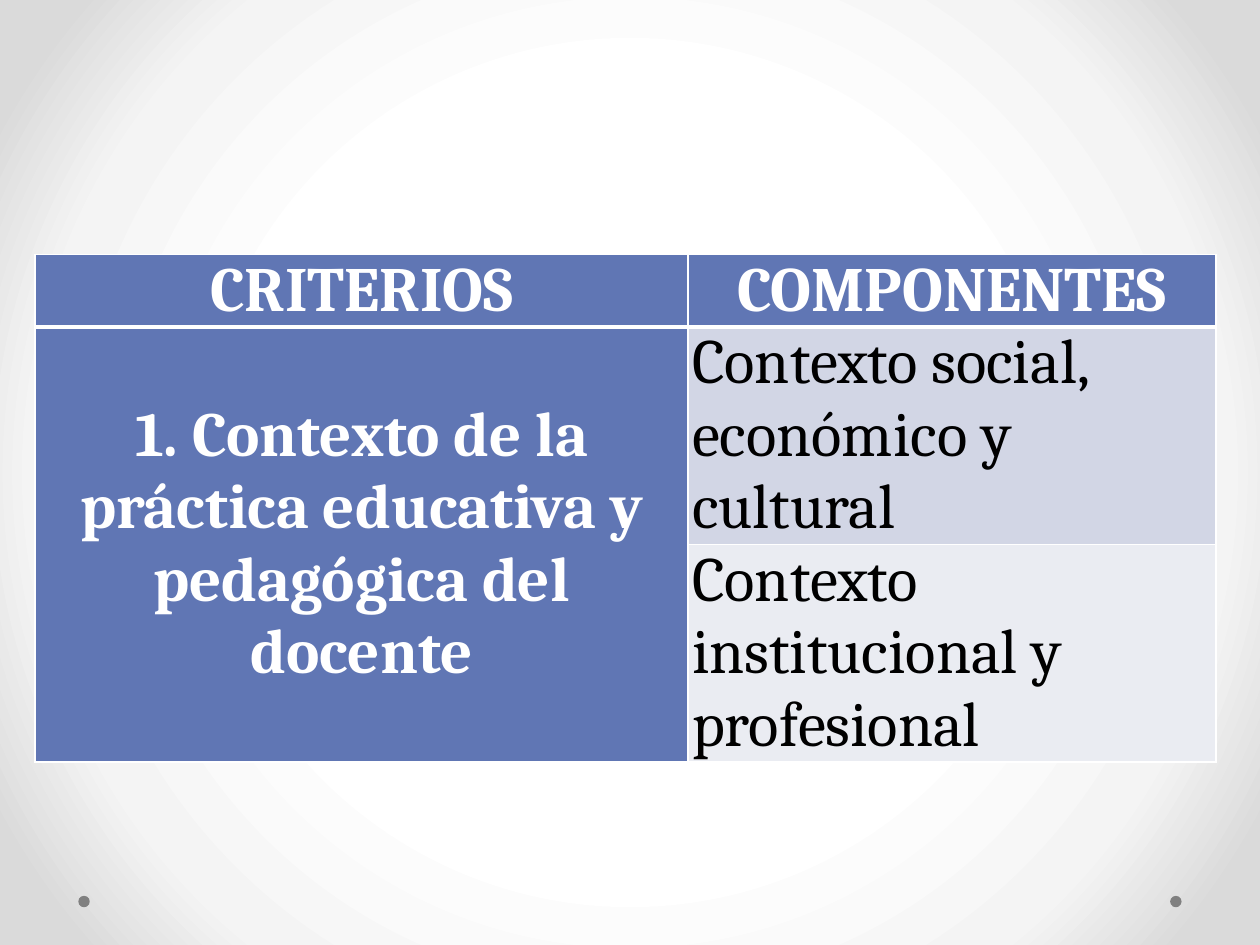
from dataclasses import dataclass

from pptx import Presentation
from pptx.dml.color import RGBColor
from pptx.enum.shapes import MSO_SHAPE as Shape
from pptx.enum.text import MSO_ANCHOR as Anchor, PP_ALIGN as Align
from pptx.oxml import parse_xml
from pptx.oxml.ns import nsdecls, qn
from pptx.util import Cm, Pt


@dataclass(frozen=True)
class Theme:
    font: str = "Cambria"
    size: int = 36
    accent: str = "6076B4"
    band_dark: str = "D2D6E5"
    band_light: str = "EAECF2"
    white: str = "FFFFFF"
    black: str = "000000"
    dot: str = "808080"
    backdrop: tuple = ((50, "FFFFFF"), (76, "F4F4F4"), (92, "DADADA"))


@dataclass(frozen=True)
class Box:
    left: float
    top: float
    width: float
    height: float


THEME = Theme()
PAGE = Box(0, 0, 25.4, 19.05)
TABLE = Box(0.71, 5.13, 23.8, 10.22)


def paint_backdrop(page):
    page.background.fill.solid()
    properties = page._element.find(".//" + qn("p:bgPr"))
    stops = "".join(
        f'<a:gs pos="{place * 1000}"><a:srgbClr val="{color}"/></a:gs>'
        for place, color in THEME.backdrop
    )
    gradient = parse_xml(
        f'<a:gradFill {nsdecls("a")} rotWithShape="1"><a:gsLst>{stops}</a:gsLst>'
        '<a:path path="circle"><a:fillToRect l="50000" t="50000" r="50000" b="50000"/>'
        "</a:path></a:gradFill>"
    )
    properties.replace(properties.find(qn("a:solidFill")), gradient)


def add_corner_dots(page, box):
    size, inset, rise = 0.23, 1.58, 0.99
    for left in (box.left + inset, box.left + box.width - inset - size):
        dot = page.shapes.add_shape(
            Shape.OVAL, Cm(left), Cm(box.top + box.height - rise), Cm(size), Cm(size)
        )
        dot.shadow.inherit = False
        dot.fill.solid()
        dot.fill.fore_color.rgb = RGBColor.from_string(THEME.dot)
        dot.line.fill.background()


def set_borders(cell, bottom):
    properties = cell._tc.get_or_add_tcPr()
    widths = {"lnL": 1, "lnR": 1, "lnT": 1, "lnB": bottom}
    for index, (side, width) in enumerate(widths.items()):
        properties.insert(index, parse_xml(
            f'<a:{side} {nsdecls("a")} w="{Pt(width)}"><a:solidFill>'
            f'<a:srgbClr val="{THEME.white}"/></a:solidFill></a:{side}>'
        ))


def fill_cell(cell, text, fill, strong, bottom=1):
    cell.fill.solid()
    cell.fill.fore_color.rgb = RGBColor.from_string(fill)
    cell.vertical_anchor = Anchor.MIDDLE
    cell.margin_left = cell.margin_right = Cm(0.08)
    cell.margin_top = cell.margin_bottom = 0
    set_borders(cell, bottom)
    para = cell.text_frame.paragraphs[0]
    para.alignment = Align.CENTER if strong else Align.LEFT
    span = para.add_run()
    span.text = text
    span.font.name = THEME.font
    span.font.size = Pt(THEME.size)
    span.font.bold = strong
    span.font.color.rgb = RGBColor.from_string(THEME.white if strong else THEME.black)


def add_criteria_table(page, box):
    header_height, first_width = 1.46, 13.16
    row_height = (box.height - header_height) / 2
    table = page.shapes.add_table(
        3, 2, Cm(box.left), Cm(box.top), Cm(box.width), Cm(box.height)
    ).table
    for column, width in zip(table.columns, (first_width, box.width - first_width)):
        column.width = Cm(width)
    for row, height in zip(table.rows, (header_height, row_height, row_height)):
        row.height = Cm(height)

    for index, title in enumerate(("CRITERIOS", "COMPONENTES")):
        fill_cell(table.cell(0, index), title, THEME.accent, True, bottom=3)

    criterion = table.cell(1, 0)
    criterion.merge(table.cell(2, 0))
    fill_cell(
        criterion,
        "1. Contexto de la práctica educativa y pedagógica del docente",
        THEME.accent,
        True,
    )
    components = (
        ("Contexto social, económico y cultural", THEME.band_dark),
        ("Contexto institucional y profesional", THEME.band_light),
    )
    for index, (text, fill) in enumerate(components, start=1):
        fill_cell(table.cell(index, 1), text, fill, False)


def main():
    deck = Presentation()
    deck.slide_width, deck.slide_height = Cm(PAGE.width), Cm(PAGE.height)
    page = deck.slides.add_slide(deck.slide_layouts[6])
    paint_backdrop(page)
    add_corner_dots(page, PAGE)
    add_criteria_table(page, TABLE)
    deck.save("out.pptx")


if __name__ == "__main__":
    main()
